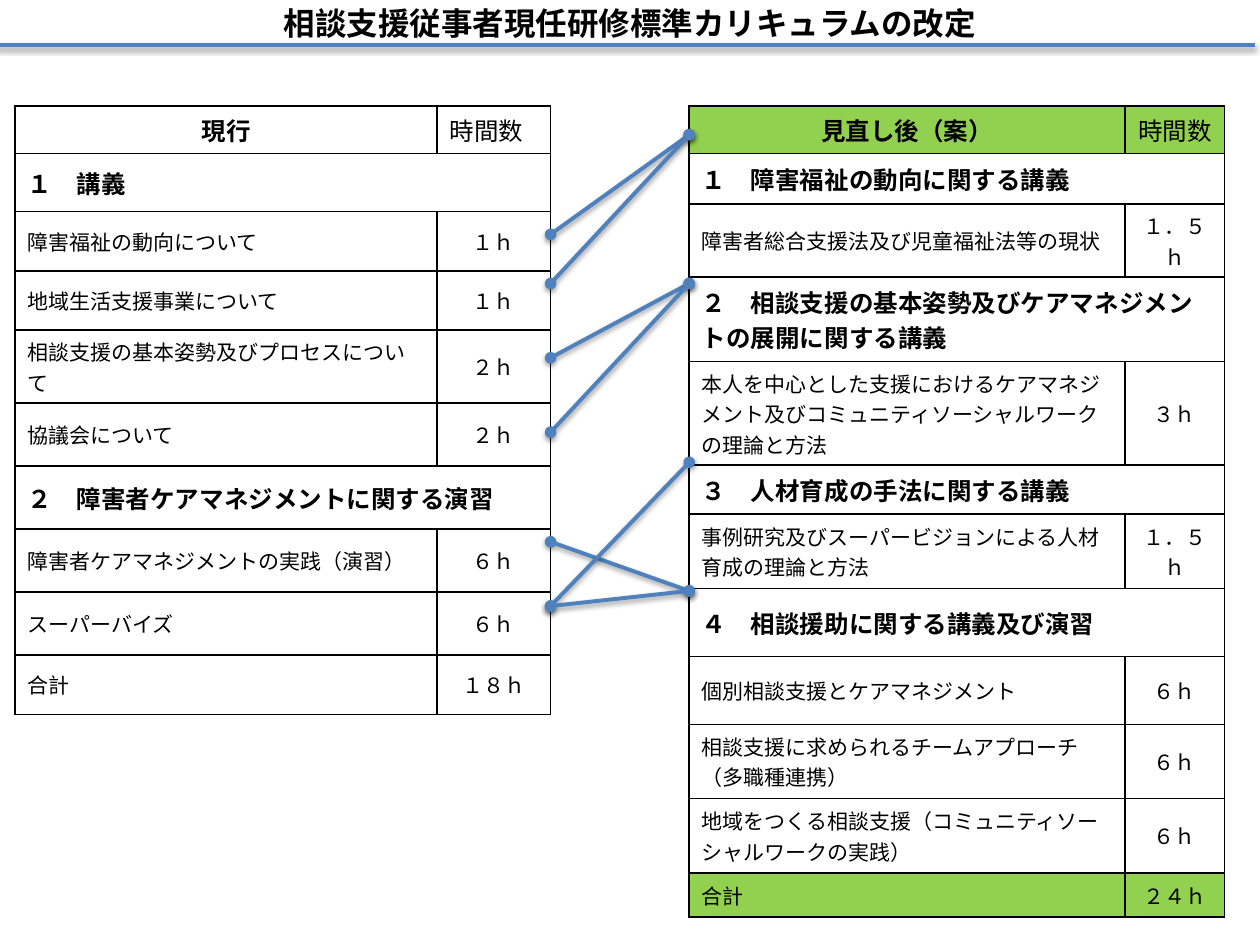
from lxml import etree
from pptx import Presentation
from pptx.dml.color import RGBColor
from pptx.enum import shapes, text
from pptx.oxml import parse_xml
from pptx.oxml.ns import nsdecls, qn
from pptx.util import Inches, Pt

BLACK = RGBColor(0x00, 0x00, 0x00)
WHITE = RGBColor(0xFF, 0xFF, 0xFF)
GREEN = RGBColor(0x92, 0xD0, 0x50)
BLUE = RGBColor(0x4F, 0x81, 0xBD)
CENTER = text.PP_ALIGN.CENTER
LEFT = text.PP_ALIGN.LEFT
TOP = text.MSO_ANCHOR.TOP
MIDDLE = text.MSO_ANCHOR.MIDDLE

SHADOW = f"""<a:effectLst {nsdecls('a')}>
  <a:outerShdw blurRad="40000" dist="20000" dir="5400000" rotWithShape="0">
    <a:srgbClr val="000000"><a:alpha val="38000"/></a:srgbClr>
  </a:outerShdw>
</a:effectLst>"""
BORDER = f"""<a:{{side}} {nsdecls('a')} w="12700">
  <a:solidFill><a:srgbClr val="{BLACK}"/></a:solidFill>
</a:{{side}}>"""


def write(frame, words, size, bold, align):
    para = frame.paragraphs[0]
    para.alignment = align
    run = para.add_run()
    run.text = words
    font = run.font
    font.name, font.size, font.bold = "Calibri", Pt(size), bold
    font.color.rgb = BLACK


def link(slide, x1, y1, x2, y2):
    line = slide.shapes.add_connector(
        shapes.MSO_CONNECTOR.STRAIGHT, Inches(x1), Inches(y1), Inches(x2), Inches(y2))
    line.line.color.rgb = BLUE
    line.line.width = Pt(2.25)
    line._element.spPr.append(parse_xml(SHADOW))
    return line


# Each row: height, topic, hours; a row without hours is a section heading
now = [
    (0.38, "現行", "時間数"),
    (0.46, "１　講義", None),
    (0.47, "障害福祉の動向について", "１ｈ"),
    (0.47, "地域生活支援事業について", "１ｈ"),
    (0.58, "相談支援の基本姿勢及びプロセスについて", "２ｈ"),
    (0.5, "協議会について", "２ｈ"),
    (0.5, "２　障害者ケアマネジメントに関する演習", None),
    (0.5, "障害者ケアマネジメントの実践（演習）", "６ｈ"),
    (0.5, "スーパーバイズ", "６ｈ"),
    (0.47, "合計", "１８ｈ"),
]
plan = [
    (0.38, "見直し後（案）", "時間数"),
    (0.4, "１　障害福祉の動向に関する講義", None),
    (0.58, "障害者総合支援法及び児童福祉法等の現状", "１．５ｈ"),
    (0.67, "２　相談支援の基本姿勢及びケアマネジメントの展開に関する講義", None),
    (0.82, "本人を中心とした支援におけるケアマネジメント及び"
           "コミュニティソーシャルワークの理論と方法", "３ｈ"),
    (0.39, "３　人材育成の手法に関する講義", None),
    (0.59, "事例研究及びスーパービジョンによる人材育成の理論と方法", "１．５ｈ"),
    (0.54, "４　相談援助に関する講義及び演習", None),
    (0.54, "個別相談支援とケアマネジメント", "６ｈ"),
    (0.59, "相談支援に求められるチームアプローチ（多職種連携）", "６ｈ"),
    (0.59, "地域をつくる相談支援（コミュニティソーシャルワークの実践）", "６ｈ"),
    (0.35, "合計", "２４ｈ"),
]

prs = Presentation()
prs.slide_width, prs.slide_height = Inches(10), Inches(7.5)
slide = prs.slides.add_slide(prs.slide_layouts[6])

title = slide.shapes.add_textbox(Inches(0.5), Inches(-0.05), Inches(9), Inches(0.46))
title.text_frame.word_wrap = True
title.text_frame.vertical_anchor = MIDDLE
write(title.text_frame, "相談支援従事者現任研修標準カリキュラムの改定", 18, True, CENTER)
link(slide, -0.04, 0.36, 9.96, 0.36)

# Tables: left edge, column widths, rows, fill of first and last row, hours heading
for left, widths, rows, accent, head in [
    (5.47, (3.46, 0.79), plan, GREEN, CENTER),
    (0.12, (3.35, 0.9), now, WHITE, LEFT),
]:
    table = slide.shapes.add_table(
        len(rows), 2, Inches(left), Inches(0.84), Inches(sum(widths)),
        Inches(sum(row[0] for row in rows))).table
    for col, width in zip(table.columns, widths):
        col.width = Inches(width)
    last = len(rows) - 1
    for i, (height, topic, hours) in enumerate(rows):
        table.rows[i].height = Inches(height)
        for cell in table.rows[i].cells:
            props = cell._tc.get_or_add_tcPr()
            for side in ("lnL", "lnR", "lnT", "lnB"):
                props.append(parse_xml(BORDER.format(side=side)))
            cell.fill.solid()
            cell.fill.fore_color.rgb = accent if i in (0, last) else WHITE
            cell.vertical_anchor = MIDDLE if i else TOP
        name, time = table.cell(i, 0), table.cell(i, 1)
        size = 14 if i == 0 or hours is None else 12
        write(name.text_frame, topic, size, size == 14, LEFT if i else CENTER)
        if hours is None:
            name.merge(time)
        else:
            write(time.text_frame, hours, size, False, CENTER if i else head)

# Links from current topics to revised sections
for start, end in [(1.86, 1.07), (2.25, 1.07), (2.84, 2.25), (3.43, 2.25),
                   (4.3, 4.69), (4.81, 3.67), (4.81, 4.69)]:
    line = link(slide, 4.37, start, 5.47, end)
    for tip in ("a:headEnd", "a:tailEnd"):
        etree.SubElement(line.line._get_or_add_ln(), qn(tip), type="oval")

prs.save("out.pptx")
